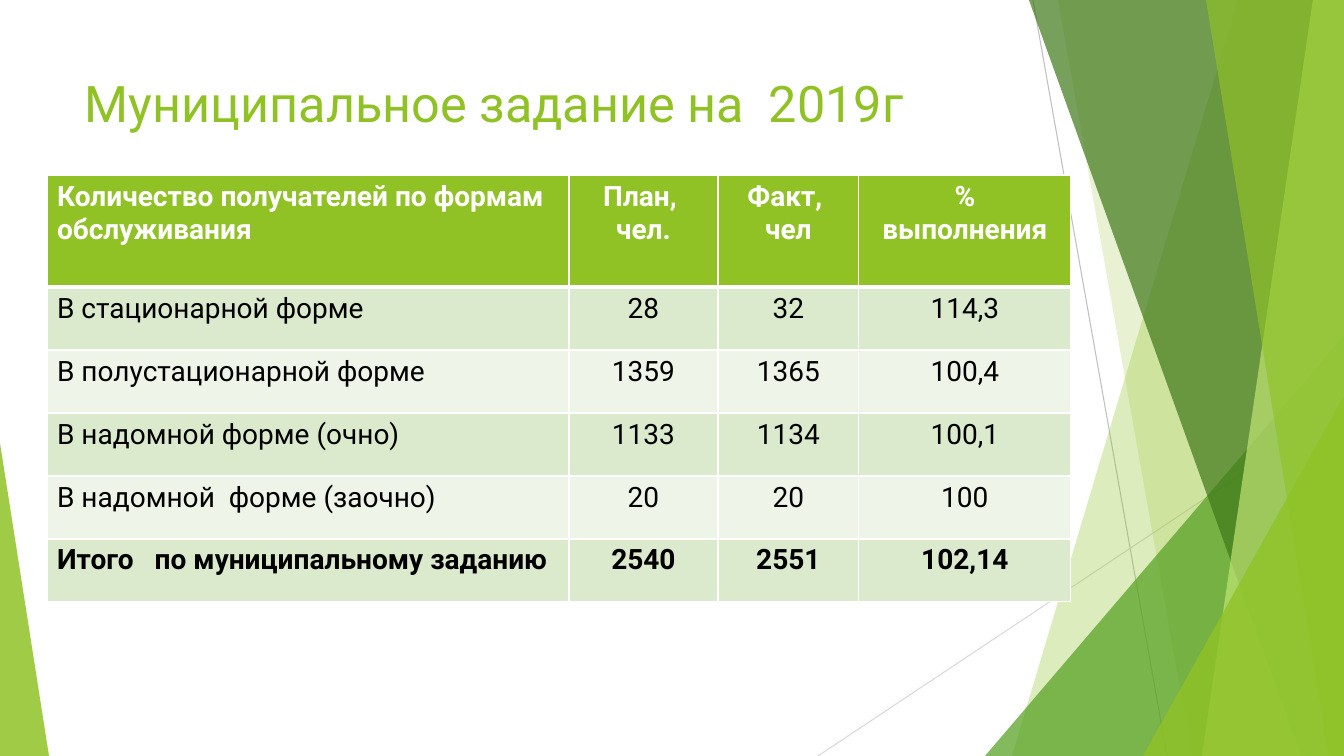
from lxml import etree
from pptx import Presentation
from pptx.dml.color import RGBColor as RGB
from pptx.enum.shapes import MSO_CONNECTOR as Conn, MSO_SHAPE as Shape
from pptx.enum.text import MSO_ANCHOR as Anchor, PP_ALIGN as Align
from pptx.oxml.ns import qn
from pptx.util import Pt

# Content
TITLE = "Муниципальное задание на  2019г"
ROWS = [
    ("Количество получателей по формам обслуживания", "План, \nчел.", "Факт, \nчел", "% выполнения"),
    ("В стационарной форме", "28", "32", "114,3"),
    ("В полустационарной форме", "1359", "1365", "100,4"),
    ("В надомной форме (очно)", "1133", "1134", "100,1"),
    ("В надомной  форме (заочно)", "20", "20", "100"),
    ("Итого   по муниципальному заданию", "2540", "2551", "102,14"),
]

# Format
COLORS = {
    "lime": "90C226", "green": "54A021", "dark": "3F7819", "pale": "C0E474",
    "gray": "BFBFBF", "light": "D9D9D9", "white": "FFFFFF", "black": "000000",
    "odd": "DBE9CD", "even": "EEF4E8",
}
FONT = "Roboto"
WIDE, HIGH = 1344, 756
COLS = [522, 149, 141, 212]
HEAD, BODY = 112, 63
TABLE_X, TABLE_Y = 47, 175

# Decor from back to front: lines are (x1, y1, x2, y2, color)
LINES = [(1033, 0, 1167, HIGH, "gray"), (WIDE, 406, 818, HIGH, "light")]
# Bands run to the right edge: ("band", top x, bottom x, color, opacity %)
# Wedges stand on the bottom edge: ("wedge", x, width, height, tip, color, opacity %)
DECOR = [
    ("band", 1238, 1012, "lime", 30),
    ("band", 1058, 1192, "lime", 20),
    ("wedge", 985, 359, 420, 1, "green", 72),
    ("band", 1029, 1301, "dark", 70),
    ("band", 1313, 1202, "pale", 70),
    ("band", 1206, 1329, "lime", 65),
    ("wedge", 1143, 201, 360, 1, "lime", 80),
    ("wedge", 0, 49, 313, 0, "lime", 85),
]

SCALE = 914400 / 100.8


def px(*vals):
    return [round(v * SCALE) for v in vals]


def rgb(name):
    return RGB.from_string(COLORS[name])


def style(font, color, **vals):
    font.color.rgb = rgb(color)
    for key, val in vals.items():
        setattr(font, key, val)


def paint(shape, color, alpha):
    shape.shadow.inherit = False
    shape.line.fill.background()
    shape.fill.solid()
    shape.fill.fore_color.rgb = rgb(color)
    tint = shape.fill._xPr.find(f".//{qn('a:srgbClr')}")
    etree.SubElement(tint, qn("a:alpha"), val=str(alpha * 1000))


def edge(cell, sizes):
    props = cell._tc.get_or_add_tcPr()
    for i, (side, size) in enumerate(zip("LRTB", sizes)):
        line = etree.Element(qn(f"a:ln{side}"), w=str(Pt(size)))
        fill = etree.SubElement(line, qn("a:solidFill"))
        etree.SubElement(fill, qn("a:srgbClr"), val=COLORS["white"])
        props.insert(i, line)


def draw_decor(shapes):
    for *ends, color in LINES:
        line = shapes.add_connector(Conn.STRAIGHT, *px(*ends))
        line.line.color.rgb = rgb(color)
        line.line.width = Pt(0.75)
        etree.SubElement(line._element.spPr, qn("a:effectLst"))
    for kind, *dims, color, alpha in DECOR:
        if kind == "band":
            top, low = dims
            path = shapes.build_freeform(top, 0, scale=SCALE)
            path.add_line_segments([(WIDE, 0), (WIDE, HIGH), (low, HIGH)], close=True)
            part = path.convert_to_shape()
        else:
            x, w, h, tip = dims
            part = shapes.add_shape(Shape.ISOSCELES_TRIANGLE, *px(x, HIGH - h, w, h))
            part.adjustments[0] = tip
        paint(part, color, alpha)


def draw_title(shapes):
    frame = shapes.add_textbox(*px(75, 67, 947, 145)).text_frame
    frame.word_wrap = True
    frame.vertical_anchor = Anchor.TOP
    frame.text = TITLE
    style(frame.paragraphs[0].runs[0].font, "lime", name=FONT, size=Pt(36))


def draw_table(shapes):
    highs = [HEAD] + [BODY] * (len(ROWS) - 1)
    box = px(TABLE_X, TABLE_Y, sum(COLS), sum(highs))
    table = shapes.add_table(len(ROWS), len(COLS), *box).table
    for col, wide in zip(table.columns, px(*COLS)):
        col.width = wide
    for row, high in zip(table.rows, px(*highs)):
        row.height = high
    for r, texts in enumerate(ROWS):
        head, last = r == 0, r == len(ROWS) - 1
        for c, text in enumerate(texts):
            cell = table.cell(r, c)
            cell.text = text
            cell.fill.solid()
            cell.fill.fore_color.rgb = rgb("lime" if head else "odd" if r % 2 else "even")
            edge(cell, (1, 1, 3 if r == 1 else 1, 3 if head else 1))
            for para in cell.text_frame.paragraphs:
                para.alignment = Align.CENTER if c else Align.LEFT
                style(para.runs[0].font, "white" if head else "black",
                      name=FONT, size=Pt(20), bold=head or last)


def main():
    deck = Presentation()
    deck.slide_width, deck.slide_height = px(WIDE, HIGH)
    shapes = deck.slides.add_slide(deck.slide_layouts[6]).shapes
    draw_decor(shapes)
    draw_title(shapes)
    draw_table(shapes)
    deck.save("out.pptx")


if __name__ == "__main__":
    main()
